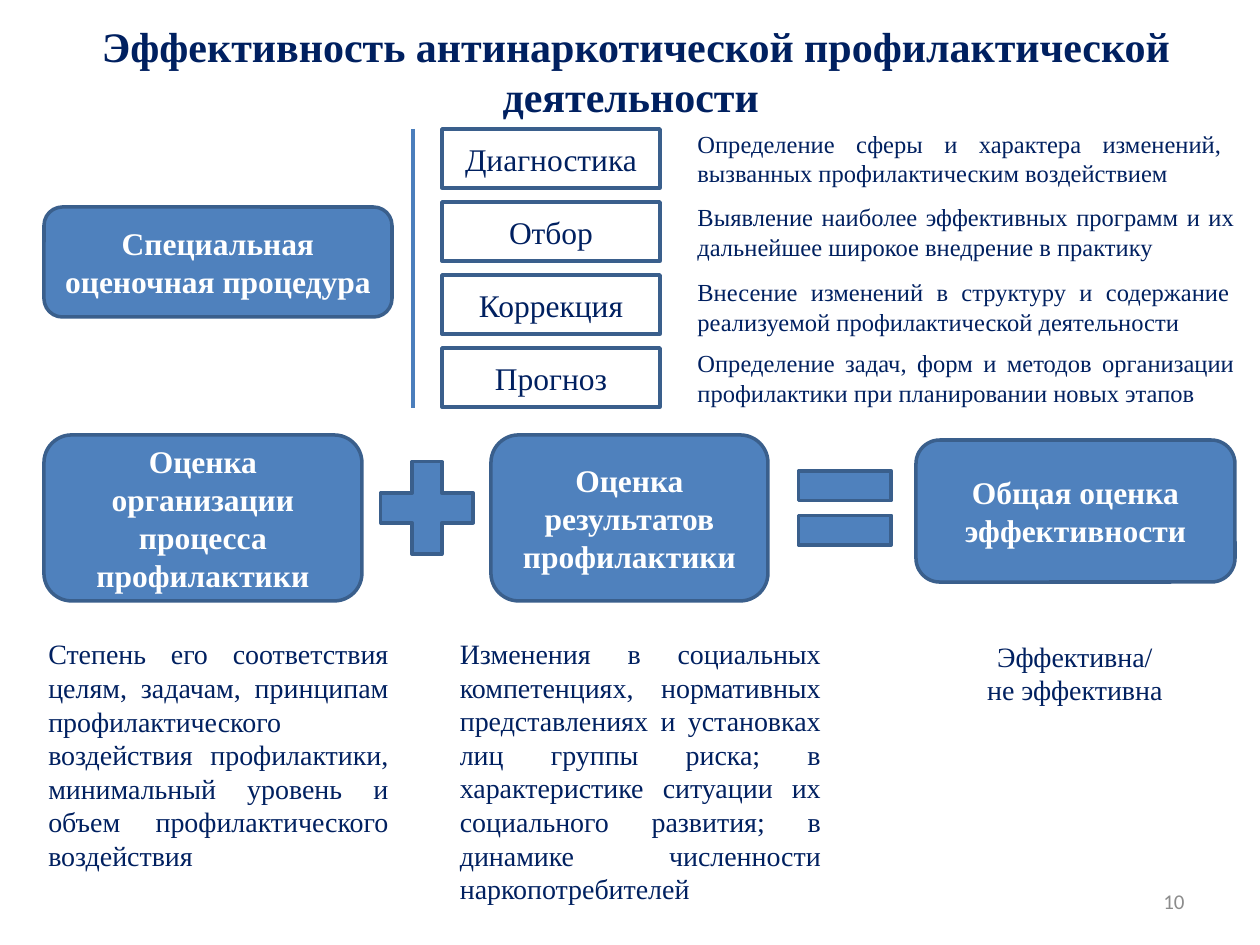
"""Build the slide on the effectiveness of anti-drug prevention work."""
from lxml import etree
from pptx import Presentation
from pptx import util as u
from pptx.dml.color import RGBColor
from pptx.enum import shapes, text
from pptx.oxml.ns import qn

SCALE = 914400 / 126
SERIF = "Times New Roman"
NAVY, BLUE, EDGE, WHITE = "002060", "4F81BD", "3A5F8C", "FFFFFF"
KIND, ALIGN = shapes.MSO_SHAPE, text.PP_ALIGN

TITLE = "Эффективность антинаркотической профилактической деятельности "
STEP_LEFT, STEP_TOP, STEP_GAP, STEP_SIZE = 442, 129, 73, (218, 59)
MEANING_LEFT = 685
STEPS = [  # label, meaning, meaning width, meaning shift down
    ("Диагностика", "Определение сферы и характера изменений, вызванных профилактическим воздействием", 549, 0),
    ("Отбор", "Выявление наиболее эффективных программ и их дальнейшее широкое внедрение в практику", 562, 0),
    ("Коррекция", "Внесение изменений в структуру и содержание реализуемой профилактической деятельности ", 557, 2),
    ("Прогноз", "Определение задач, форм и методов организации профилактики при планировании новых этапов", 562, 0),
]
HEADINGS = [
    ("Специальная оценочная процедура", (44, 207, 348, 110)),
    ("Оценка организации процесса профилактики", (44, 435, 318, 166)),
    ("Оценка результатов профилактики", (491, 435, 277, 166)),
    ("Общая оценка эффективности", (916, 440, 319, 142)),
]
SIGNS = [(KIND.MATH_PLUS, (364, 445, 126, 126)), (KIND.MATH_EQUAL, (782, 445, 126, 126))]
DETAILS = [
    ("Степень его соответствия целям, задачам, принципам профилактического воздействия профилактики, "
     "минимальный уровень и объем профилактического воздействия", (23, 622, 391, 265), ALIGN.JUSTIFY),
    ("Изменения в социальных компетенциях, нормативных представлениях и установках лиц группы риска; "
     "в характеристике ситуации их социального развития; в динамике численности наркопотребителей ",
     (432, 612, 417, 318), ALIGN.JUSTIFY),
    ("Эффективна/\nне эффективна", (916, 596, 318, 154), ALIGN.CENTER),
]


def px(value):
    return u.Emu(round(value * SCALE))


def colour(value):
    return RGBColor.from_string(value)


def write(box, words, size=18, ink=NAVY, bold=False, align=ALIGN.CENTER, font=SERIF,
          anchor=text.MSO_ANCHOR.MIDDLE):
    frame = box.text_frame
    frame.word_wrap = True
    frame.vertical_anchor = anchor
    for index, line in enumerate(words.split("\n")):
        para = frame.add_paragraph() if index else frame.paragraphs[0]
        para.alignment = align
        span = para.add_run()
        span.text = line
        span.font.name, span.font.size, span.font.bold = font, u.Pt(size), bold
        span.font.color.rgb = colour(ink)


def add_box(page, kind, place, fill=BLUE, line=EDGE):
    box = page.shapes.add_shape(kind, *map(px, place))
    box.shadow.inherit = False
    box.fill.solid()
    box.fill.fore_color.rgb = colour(fill)
    box.line.color.rgb = colour(line)
    box.line.width = u.Pt(2)
    return box


def add_text(page, place, words, **look):
    write(page.shapes.add_textbox(*map(px, place)), words, **look)


def add_divider(page, x, top, bottom):
    rule = page.shapes.add_connector(shapes.MSO_CONNECTOR.STRAIGHT, px(x), px(top), px(x), px(bottom))
    rule.line.color.rgb = colour("4B7EBC")
    rule.line.width = u.Pt(2.25)
    etree.SubElement(rule._element.spPr, qn("a:effectLst"))


def main():
    deck = Presentation()
    deck.slide_width, deck.slide_height = px(1260), px(945)
    page = deck.slides.add_slide(deck.slide_layouts[6])
    add_text(page, (903, 876, 294, 50), "10", size=12, ink="8C8C8C", align=ALIGN.RIGHT, font="Calibri")
    add_text(page, (23, 14, 1226, 115), TITLE, size=24, bold=True, anchor=text.MSO_ANCHOR.TOP)
    for index, (label, meaning, width, shift) in enumerate(STEPS):
        top = STEP_TOP + index * STEP_GAP
        write(add_box(page, KIND.RECTANGLE, (STEP_LEFT, top, *STEP_SIZE), fill=WHITE), label)
        place = (MEANING_LEFT, top + shift, width, STEP_SIZE[1])
        write(add_box(page, KIND.RECTANGLE, place, fill=WHITE, line=WHITE), meaning,
              size=14, align=ALIGN.JUSTIFY)
    for words, place in HEADINGS:
        write(add_box(page, KIND.ROUNDED_RECTANGLE, place), words, ink=WHITE, bold=True)
    for kind, place in SIGNS:
        add_box(page, kind, place)
    for words, place, align in DETAILS:
        write(add_box(page, KIND.ROUNDED_RECTANGLE, place, fill=WHITE, line=WHITE), words,
              size=16, align=align)
    add_divider(page, 413, 129, 408)
    deck.save("out.pptx")


if __name__ == "__main__":
    main()
